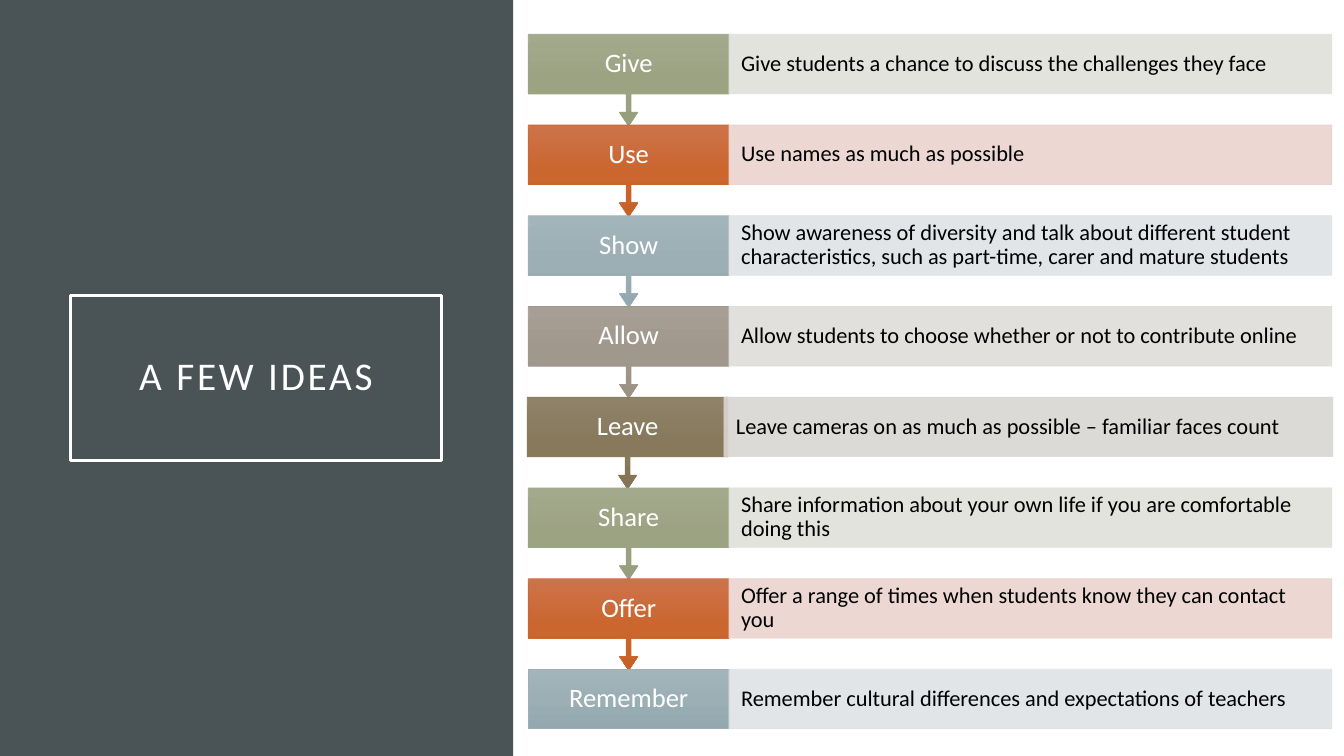
"""Build a slide with a title panel and a downward chain of eight teaching ideas."""
import copy

import pptx
import pptx.dml.color
import pptx.enum.shapes
import pptx.enum.text
import pptx.oxml.ns
import pptx.oxml.xmlchemy
import pptx.util
from lxml import etree

RGBColor = pptx.dml.color.RGBColor
SHAPE = pptx.enum.shapes.MSO_SHAPE
ALIGN = pptx.enum.text.PP_ALIGN
qn = pptx.oxml.ns.qn
Inches = pptx.util.Inches
Pt = pptx.util.Pt

WHITE = RGBColor(0xFF, 0xFF, 0xFF)
BLACK = RGBColor(0x00, 0x00, 0x00)
SLATE = RGBColor(0x4A, 0x53, 0x56)

SAGE = [RGBColor(0xA3, 0xA9, 0x8C), RGBColor(0x9C, 0xA3, 0x83),
        RGBColor(0x97, 0x9E, 0x7C), RGBColor(0xDE, 0xE0, 0xD9)]
RUST = [RGBColor(0xCC, 0x73, 0x4B), RGBColor(0xCB, 0x66, 0x2F),
        RGBColor(0xC8, 0x61, 0x28), RGBColor(0xEB, 0xD3, 0xCE)]
BLUE = [RGBColor(0xA3, 0xB5, 0xBB), RGBColor(0x9B, 0xAF, 0xB5),
        RGBColor(0x93, 0xA9, 0xAF), RGBColor(0xDE, 0xE3, 0xE5)]
TAUPE = [RGBColor(0xA7, 0x9F, 0x95), RGBColor(0xA0, 0x98, 0x8C),
         RGBColor(0x9B, 0x92, 0x85), RGBColor(0xDF, 0xDD, 0xDA)]
BROWN = [RGBColor(0x8F, 0x82, 0x69), RGBColor(0x88, 0x79, 0x5C),
         RGBColor(0x84, 0x75, 0x57), RGBColor(0xD9, 0xD7, 0xD2)]
PALETTES = [SAGE, RUST, BLUE, TAUPE, BROWN]

IDEAS = [
    ("Give", "Give students a chance to discuss the challenges they face"),
    ("Use", "Use names as much as possible"),
    ("Show", "Show awareness of diversity and talk about different student "
             "characteristics, such as part-time, carer and mature students"),
    ("Allow", "Allow students to choose whether or not to contribute online"),
    ("Leave", "Leave cameras on as much as possible – familiar faces count"),
    ("Share", "Share information about your own life if you are comfortable doing this"),
    ("Offer", "Offer a range of times when students know they can contact you"),
    ("Remember", "Remember cultural differences and expectations of teachers"),
]

TOP, PITCH, BOX_H, CALLOUT_H = 0.34, 0.9, 0.59, 0.91
VERB_X, VERB_W = 5.24, 1.99
BAR_X, BAR_RIGHT = VERB_X + VERB_W, 13.21


def add_box(kind, x, y, w, h):
    s = slide.shapes.add_shape(kind, Inches(x), Inches(y), Inches(w), Inches(h))
    s.shadow.inherit = False
    return s


def write(s, text, size, color, align, inset_x, inset_y):
    tf = s.text_frame
    tf.text = text
    tf.word_wrap = True
    tf.vertical_anchor = pptx.enum.text.MSO_ANCHOR.MIDDLE
    tf.margin_left = tf.margin_right = Inches(inset_x)
    tf.margin_top = tf.margin_bottom = Inches(inset_y)
    p = tf.paragraphs[0]
    p.alignment = align
    p.line_spacing = 0.9
    r = p.runs[0]
    r.font.name = "Calibri"
    r.font.size = Pt(size)
    r.font.color.rgb = color
    return r


prs = pptx.Presentation()
prs.slide_width, prs.slide_height = Inches(13.33), Inches(7.5)
slide = prs.slides.add_slide(prs.slide_layouts[6])

panel = add_box(SHAPE.RECTANGLE, 0, 0, 5.09, 7.5)
panel.fill.solid()
panel.fill.fore_color.rgb = SLATE
panel.line.fill.background()

title = add_box(SHAPE.RECTANGLE, 0.7, 2.93, 3.68, 1.64)
title.fill.background()
title.line.color.rgb = WHITE
title.line.width = Pt(2.5)
r = write(title, "A FEW IDEAS", 28, WHITE, ALIGN.CENTER, 0.2, 0.2)
r.font._element.set("spc", "200")

for i, (verb, advice) in enumerate(IDEAS):
    palette = PALETTES[i % len(PALETTES)]
    y = TOP + i * PITCH
    verb_x, bar_x, bar_right = VERB_X, BAR_X, BAR_RIGHT
    if verb == "Leave":
        verb_x, bar_x, bar_right = 5.23, 7.18, 13.22

    if i < len(IDEAS) - 1:
        s = add_box(SHAPE.DOWN_ARROW_CALLOUT, verb_x, y, VERB_W, CALLOUT_H)
        for n, share in enumerate((0.05, 0.1, 0.15, 0.65)):
            s.adjustments[n] = share
    else:
        s = add_box(SHAPE.RECTANGLE, verb_x, y, VERB_W, BOX_H)
    s.fill.gradient()
    s.fill.gradient_angle = 270
    stops = s._element.spPr.find(".//" + qn("a:gsLst"))
    stops.insert(1, copy.deepcopy(stops[0]))
    for stop, color, position in zip(s.fill.gradient_stops, palette, (0, 0.5, 1)):
        stop.color.rgb = color
        stop.position = position
    s.line.color.rgb = palette[1]
    s.line.width = Pt(0.5)
    write(s, verb, 19, WHITE, ALIGN.CENTER, 0.14, 0.05)

    bar = add_box(SHAPE.RECTANGLE, bar_x, y, bar_right - bar_x, BOX_H)
    bar.fill.solid()
    bar.fill.fore_color.rgb = palette[3]
    bar.line.color.rgb = palette[3]
    bar.line.width = Pt(0.5)
    for clr in bar._element.spPr.iter(qn("a:srgbClr")):
        etree.SubElement(clr, qn("a:alpha")).set("val", "90000")
    write(bar, advice, 16, BLACK, ALIGN.LEFT, 0.12, 0.05)

prs.save("out.pptx")
